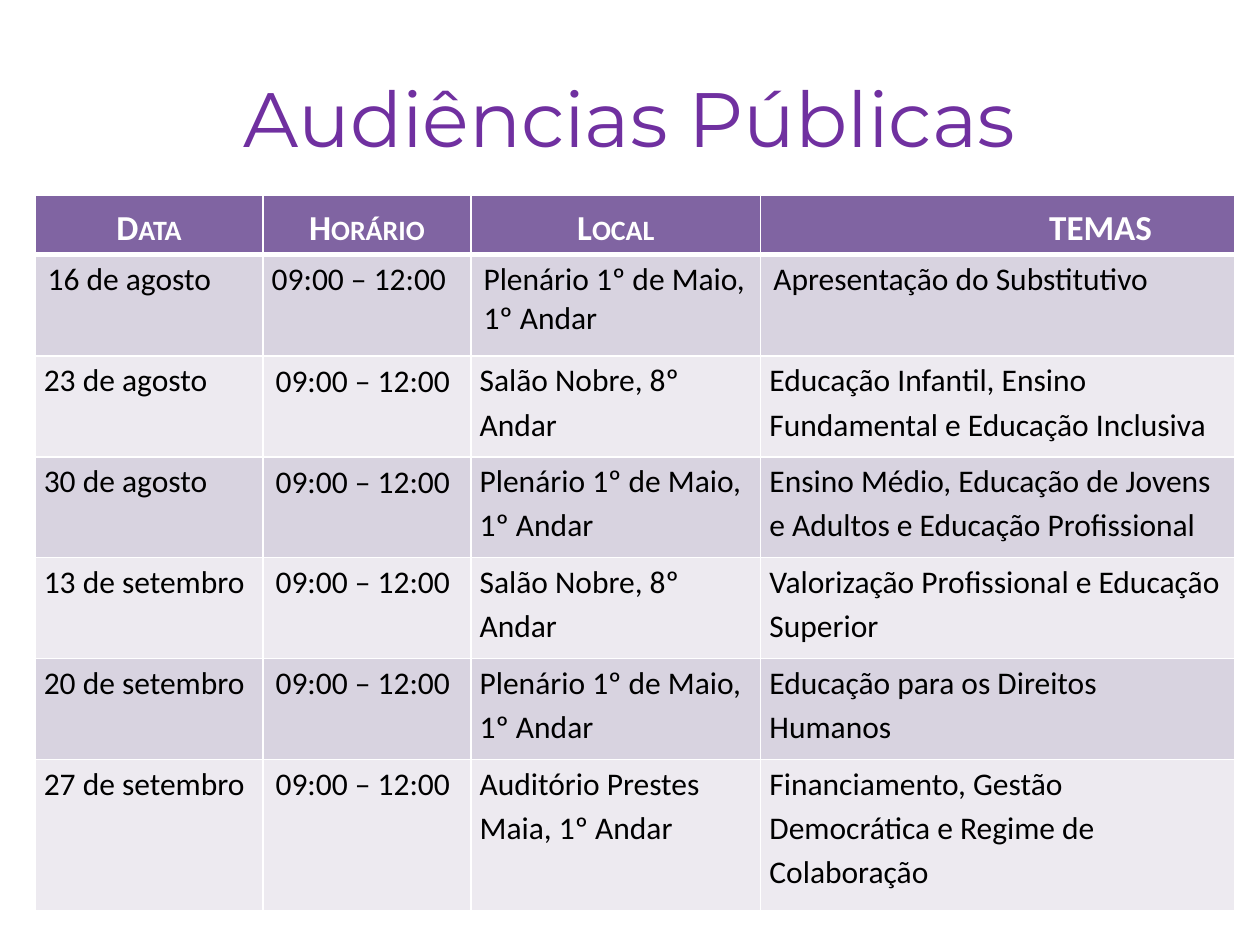
import dataclasses

import pptx
import pptx.dml.color
import pptx.enum.text
import pptx.oxml
import pptx.oxml.ns
import pptx.util

Pt = pptx.util.Pt
ALIGN = pptx.enum.text.PP_ALIGN
ANCHOR = pptx.enum.text.MSO_ANCHOR


@dataclasses.dataclass(frozen=True)
class Theme:
    title_font: str = "Montserrat"
    table_font: str = "Calibri"
    title_size: int = 44
    header_size: int = 20
    body_size: int = 18
    title: str = "7030A0"
    header_fill: str = "8064A2"
    bands: tuple = ("D8D3E0", "EDEAF0")
    line: str = "FFFFFF"
    header_text: str = "FFFFFF"
    body_text: str = "000000"


THEME = Theme()
HOURS = "09:00 – 12:00"
PLENARY = "Plenário 1º de Maio, 1º Andar"
HALL = "Salão Nobre, 8º Andar"
HEADER = ("Data", "Horário", "Local", "TEMAS")
HEARINGS = [
    ("16 de agosto", PLENARY, "Apresentação do Substitutivo"),
    ("23 de agosto", HALL,
     "Educação Infantil, Ensino Fundamental e Educação Inclusiva"),
    ("30 de agosto", PLENARY,
     "Ensino Médio, Educação de Jovens e Adultos e Educação Profissional"),
    ("13 de setembro", HALL, "Valorização Profissional e Educação Superior"),
    ("20 de setembro", PLENARY, "Educação para os Direitos Humanos"),
    ("27 de setembro", "Auditório Prestes Maia, 1º Andar",
     "Financiamento, Gestão Democrática e Regime de Colaboração"),
]
COLUMN_WIDTHS = (130.3, 118.8, 165.6, 270.7)
ROW_HEIGHTS = (33.8, 58.1, 57.6, 57.6, 57.6, 57.6, 86.4)
TIGHT_MARGIN = 5
TOPICS_HEADER_SHIFT = 59


def style_run(span, font, size, color, bold=False):
    span.font.name = font
    span.font.size = Pt(size)
    span.font.bold = bold
    span.font.color.rgb = pptx.dml.color.RGBColor.from_string(color)


def set_borders(cell, top, bottom):
    """Draw all four sides; the widths of top and bottom are in points."""
    properties = cell._tc.get_or_add_tcPr()
    for side, width in (("L", 1), ("R", 1), ("T", top), ("B", bottom)):
        properties.append(pptx.oxml.parse_xml(
            f'<a:ln{side} {pptx.oxml.ns.nsdecls("a")} w="{Pt(width)}">'
            f'<a:solidFill><a:srgbClr val="{THEME.line}"/></a:solidFill>'
            f'</a:ln{side}>'))


def fill_cell(cell, text, fill, tight):
    """Write a left-aligned body cell and return its paragraph."""
    cell.text_frame.text = text
    cell.fill.solid()
    cell.fill.fore_color.rgb = pptx.dml.color.RGBColor.from_string(fill)
    para = cell.text_frame.paragraphs[0]
    para.space_before = para.space_after = Pt(6)
    if tight:
        cell.margin_left = cell.margin_right = Pt(TIGHT_MARGIN)
        cell.margin_top = cell.margin_bottom = Pt(0)
        para.line_spacing = 1.15
    return para


def add_title(page, left, top, width, height):
    box = page.shapes.title
    box.left, box.top, box.width, box.height = map(Pt, (left, top, width, height))
    box.text_frame.text = "Audiências Públicas"
    box.text_frame.vertical_anchor = ANCHOR.MIDDLE
    para = box.text_frame.paragraphs[0]
    para.alignment = ALIGN.CENTER
    style_run(para.runs[0], THEME.title_font, THEME.title_size, THEME.title)


def add_header_row(table):
    for column, text in enumerate(HEADER):
        cell = table.cell(0, column)
        set_borders(cell, top=1, bottom=3)
        para = fill_cell(cell, text, THEME.header_fill, tight=True)
        para.alignment = ALIGN.CENTER
        cell.vertical_anchor = ANCHOR.MIDDLE
        span = para.runs[0]
        style_run(span, THEME.table_font, THEME.header_size,
                  THEME.header_text, bold=True)
        span.font._element.set("cap", "small")
    cell.margin_left = Pt(TIGHT_MARGIN + TOPICS_HEADER_SHIFT)


def add_hearing_rows(table):
    for row, (date, place, topic) in enumerate(HEARINGS, start=1):
        for column, text in enumerate((date, HOURS, place, topic)):
            cell = table.cell(row, column)
            set_borders(cell, top=3 if row == 1 else 1, bottom=1)
            # The first hearing has the opposite spacing of all the others.
            tight = (row == 1) == (column == 1)
            para = fill_cell(cell, text, THEME.bands[(row - 1) % 2], tight)
            style_run(para.runs[0], THEME.table_font, THEME.body_size,
                      THEME.body_text)


def add_schedule(page, left, top):
    frame = page.shapes.add_table(
        len(ROW_HEIGHTS), len(COLUMN_WIDTHS), Pt(left), Pt(top),
        Pt(sum(COLUMN_WIDTHS)), Pt(sum(ROW_HEIGHTS)))
    table = frame.table
    table.horz_banding = False
    for column, width in zip(table.columns, COLUMN_WIDTHS):
        column.width = Pt(width)
    for row, height in zip(table.rows, ROW_HEIGHTS):
        row.height = Pt(height)
    add_header_row(table)
    add_hearing_rows(table)


def main():
    deck = pptx.Presentation()
    deck.slide_width, deck.slide_height = Pt(720), Pt(540)
    page = deck.slides.add_slide(deck.slide_layouts.get_by_name("Title Only"))
    add_title(page, 36, 21.6, 648, 90)
    add_schedule(page, 20, 111.6)
    deck.save("out.pptx")


if __name__ == "__main__":
    main()
